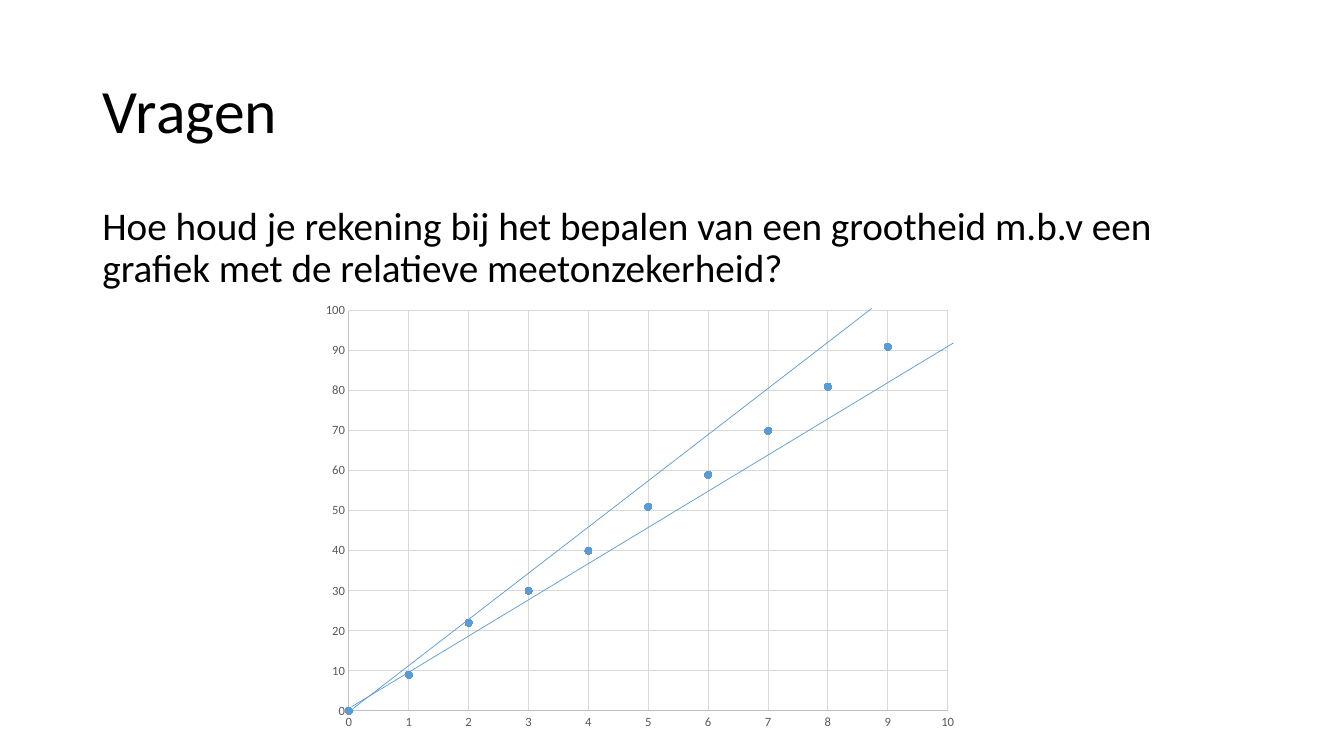
from lxml import etree
from pptx import Presentation
from pptx.chart.data import XyChartData
from pptx.dml.color import RGBColor
from pptx.enum.chart import XL_CHART_TYPE, XL_MARKER_STYLE, XL_TICK_MARK
from pptx.enum.shapes import MSO_CONNECTOR
from pptx.enum.text import MSO_ANCHOR
from pptx.oxml import parse_xml
from pptx.oxml.ns import nsdecls, qn
from pptx.util import Cm, Pt

SCATTER = XL_CHART_TYPE.XY_SCATTER
CIRCLE = XL_MARKER_STYLE.CIRCLE
NO_TICK = XL_TICK_MARK.NONE
STRAIGHT = MSO_CONNECTOR.STRAIGHT
TOP, MIDDLE = MSO_ANCHOR.TOP, MSO_ANCHOR.MIDDLE

COLORS = {"text": "000000", "label": "595959", "axis": "BFBFBF",
          "grid": "D9D9D9", "accent": "5B9BD5"}
MEASUREMENTS = [0, 9, 22, 30, 40, 51, 59, 70, 81, 91]
# Inner plot area as fractions of the chart
PLOT_AREA = {"x": 0.056, "y": 0.035, "w": 0.914, "h": 0.902}
# Steepest and flattest line through the measurements, in cm
LIMIT_LINES = [(8.86, 17.81, 24.03, 8.64), (8.89, 17.86, 21.97, 7.77)]


class SlideBuilder:
    """Holds the text style and the slide being filled."""

    font = "Calibri"

    def __init__(self, prs):
        self.s = prs.slides.add_slide(prs.slide_layouts[6])

    def style_font(self, font, size, color):
        for name, value in {"name": self.font, "size": Pt(size)}.items():
            setattr(font, name, value)
        font.color.rgb = RGBColor.from_string(COLORS[color])

    def style_line(self, line, width, color):
        line.width = Pt(width)
        line.color.rgb = RGBColor.from_string(COLORS[color])

    def text(self, box, text, size, anchor=TOP, before=0):
        tf = self.s.shapes.add_textbox(*map(Cm, box)).text_frame
        for name, value in {"word_wrap": True, "vertical_anchor": anchor}.items():
            setattr(tf, name, value)
        p = tf.paragraphs[0]
        for name, value in {"line_spacing": 0.9, "space_before": Pt(before)}.items():
            setattr(p, name, value)
        r = p.add_run()
        r.text = text
        self.style_font(r.font, size, "text")

    def axis(self, axis, maximum, step):
        settings = {"minimum_scale": 0, "maximum_scale": maximum, "major_unit": step,
                    "major_tick_mark": NO_TICK, "minor_tick_mark": NO_TICK,
                    "has_major_gridlines": True}
        for name, value in settings.items():
            setattr(axis, name, value)
        self.style_font(axis.tick_labels.font, 9, "label")
        self.style_line(axis.format.line, 0.75, "axis")
        self.style_line(axis.major_gridlines.format.line, 0.75, "grid")

    def plot_layout(self, chart):
        """Fix the inner plot area so that the limit lines fit the axes."""
        area = chart._chartSpace.find(".//" + qn("c:plotArea"))
        for old in area.findall(qn("c:layout")):
            area.remove(old)
        layout = parse_xml(f"<c:layout {nsdecls('c')}><c:manualLayout/></c:layout>")
        values = {"layoutTarget": "inner", "xMode": "edge", "yMode": "edge", **PLOT_AREA}
        for tag, value in values.items():
            etree.SubElement(layout[0], qn(f"c:{tag}")).set("val", str(value))
        area.insert(0, layout)

    def scatter(self, box, values):
        data = XyChartData()
        points = data.add_series("Series 1")
        for x, y in enumerate(values):
            points.add_data_point(x, y)
        chart = self.s.shapes.add_chart(SCATTER, *map(Cm, box), data).chart
        chart.has_legend = chart.has_title = False
        self.style_font(chart.font, 10, "text")
        self.axis(chart.category_axis, 10, 1)
        self.axis(chart.value_axis, 100, 10)
        self.plot_layout(chart)

        plot = chart.plots[0]
        plot.vary_by_categories = False
        series = plot.series[0]
        series.format.line.fill.background()
        marker = series.marker
        marker.style, marker.size = CIRCLE, 5
        marker.format.fill.solid()
        marker.format.fill.fore_color.rgb = RGBColor.from_string(COLORS["accent"])
        self.style_line(marker.format.line, 0.75, "accent")

    def line(self, ends):
        sp = self.s.shapes.add_connector(STRAIGHT, *map(Cm, ends))
        self.style_line(sp.line, 0.5, "accent")
        etree.SubElement(sp._element.spPr, qn("a:effectLst"))


def main():
    prs = Presentation()
    prs.slide_width, prs.slide_height = Cm(33.87), Cm(19.05)
    slide = SlideBuilder(prs)
    slide.text((2.33, 1.02, 29.21, 3.68), "Vragen", 44, anchor=MIDDLE)
    slide.text((2.33, 5.08, 29.21, 12.09),
               "Hoe houd je rekening bij het bepalen van een grootheid m.b.v een "
               "grafiek met de relatieve meetonzekerheid?", 28, before=10)
    slide.scatter((7.87, 7.44, 16.51, 11.18), MEASUREMENTS)
    for ends in LIMIT_LINES:
        slide.line(ends)
    prs.save("out.pptx")


if __name__ == "__main__":
    main()
